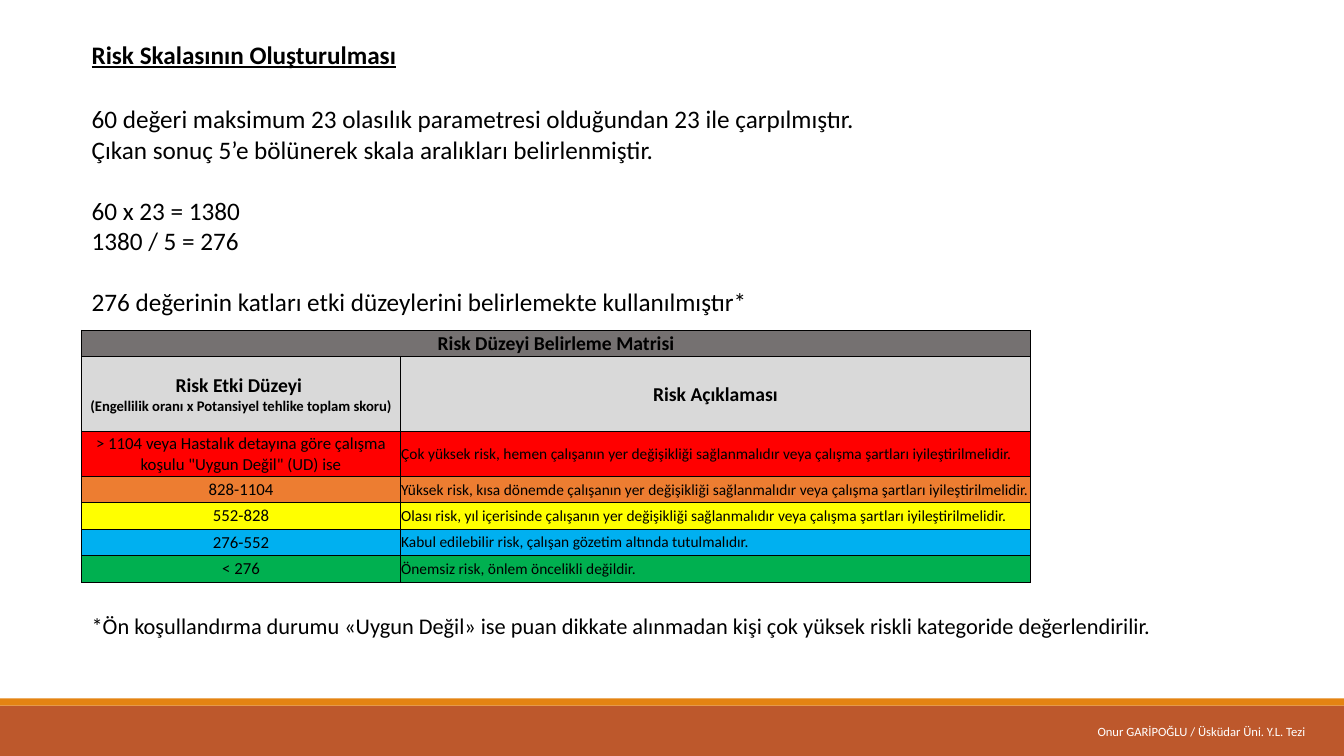
"""Build the risk scale slide with its risk level matrix."""
import lxml.etree
import pptx
import pptx.dml.color
import pptx.enum.shapes
import pptx.enum.text
import pptx.oxml.ns
import pptx.util

Cm = pptx.util.Cm
Pt = pptx.util.Pt
RGBColor = pptx.dml.color.RGBColor
PP_ALIGN = pptx.enum.text.PP_ALIGN
MIDDLE = pptx.enum.text.MSO_ANCHOR.MIDDLE

BLACK = RGBColor(0x00, 0x00, 0x00)
WHITE = RGBColor(0xFF, 0xFF, 0xFF)
RUST = RGBColor(0xBD, 0x58, 0x2C)
AMBER = RGBColor(0xE4, 0x83, 0x12)
DARK_GREY = RGBColor(0x75, 0x71, 0x71)
LIGHT_GREY = RGBColor(0xD9, 0xD9, 0xD9)
RED = RGBColor(0xFF, 0x00, 0x00)
ORANGE = RGBColor(0xED, 0x7D, 0x31)
YELLOW = RGBColor(0xFF, 0xFF, 0x00)
BLUE = RGBColor(0x00, 0xB0, 0xF0)
GREEN = RGBColor(0x00, 0xB0, 0x50)

WIDTH, HEIGHT, LEFT = 33.87, 19.05, 2.06
COLUMNS = [8.03, 15.88]
ROWS = [0.66, 1.88, 1.14, 0.66, 0.66, 0.66, 0.69]

LEVELS = [
    (RED, '> 1104 veya Hastalık detayına göre çalışma koşulu "Uygun Değil" (UD) ise',
     "Çok yüksek risk, hemen çalışanın yer değişikliği sağlanmalıdır veya çalışma şartları iyileştirilmelidir."),
    (ORANGE, "828-1104",
     "Yüksek risk, kısa dönemde çalışanın yer değişikliği sağlanmalıdır veya çalışma şartları iyileştirilmelidir."),
    (YELLOW, "552-828",
     "Olası risk, yıl içerisinde çalışanın yer değişikliği sağlanmalıdır veya çalışma şartları iyileştirilmelidir."),
    (BLUE, "276-552", "Kabul edilebilir risk, çalışan gözetim altında tutulmalıdır."),
    (GREEN, "< 276", "Önemsiz risk, önlem öncelikli değildir."),
]

EXPLANATION = [
    ("60 değeri maksimum 23 olasılık parametresi olduğundan 23 ile çarpılmıştır.", 0),
    ("Çıkan sonuç 5’e bölünerek skala aralıkları belirlenmiştir.", 0),
    ("60 x 23 = 1380", 22),
    ("1380 / 5 = 276", 0),
    ("276 değerinin katları etki düzeylerini belirlemekte kullanılmıştır*", 22),
]


class SlideBuilder:
    def __init__(self, prs, font):
        self.s = prs.slides.add_slide(prs.slide_layouts[6])
        self.font = font

    def apply(self, target, formats):
        for name, value in formats.items():
            setattr(target, name, value)

    def run(self, p, text, size, color=BLACK, **formats):
        r = p.add_run()
        r.text = text
        self.apply(r.font, {"name": self.font, "size": Pt(size), **formats})
        r.font.color.rgb = color

    def bar(self, top, height, color):
        sp = self.s.shapes.add_shape(pptx.enum.shapes.MSO_SHAPE.RECTANGLE,
                                     0, Cm(top), Cm(WIDTH), Cm(height))
        sp.shadow.inherit = False
        sp.fill.solid()
        sp.fill.fore_color.rgb = color
        sp.line.fill.background()

    def text(self, box, lines, size, align=PP_ALIGN.LEFT, color=BLACK, anchor=None, **formats):
        tf = self.s.shapes.add_textbox(*[Cm(v) for v in box]).text_frame
        self.apply(tf, {"word_wrap": True, "vertical_anchor": anchor})
        for i, (line, gap) in enumerate(lines):
            p = tf.add_paragraph() if i else tf.paragraphs[0]
            self.apply(p, {"alignment": align, "space_before": Pt(gap)})
            self.run(p, line, size, color, **formats)

    def table(self, left, top, columns, rows):
        frame = self.s.shapes.add_table(len(rows), len(columns), Cm(left), Cm(top),
                                        Cm(sum(columns)), Cm(sum(rows)))
        table = frame.table
        self.apply(table, {"first_row": False, "horz_banding": False})
        for column, width in zip(table.columns, columns):
            column.width = Cm(width)
        for row, height in zip(table.rows, rows):
            row.height = Cm(height)
        return table

    def cell(self, table, row, col, color, parts, align=PP_ALIGN.CENTER, **formats):
        cell = table.cell(row, col)
        self.apply(cell, {"margin_left": Cm(0.02), "margin_right": Cm(0.02),
                          "margin_top": Cm(0.02), "margin_bottom": 0,
                          "vertical_anchor": MIDDLE})
        cell.fill.solid()
        cell.fill.fore_color.rgb = color
        p = cell.text_frame.paragraphs[0]
        p.alignment = align
        for i, (text, size) in enumerate(parts):
            if i:
                p.add_line_break()
            self.run(p, text, size, **formats)
        last_row, last_col = len(table.rows) - 1, len(table.columns) - 1
        outer = {"L": col == 0, "R": col == last_col, "T": row == 0, "B": row == last_row}
        self.borders(cell, outer)

    def borders(self, cell, outer):
        qn = pptx.oxml.ns.qn
        tc_pr = cell._tc.get_or_add_tcPr()
        for i, (side, is_outer) in enumerate(outer.items()):
            ln = lxml.etree.Element(qn("a:ln" + side), w=str(Pt(1 if is_outer else 0.5)))
            fill = lxml.etree.SubElement(ln, qn("a:solidFill"))
            lxml.etree.SubElement(fill, qn("a:srgbClr"), val=str(BLACK))
            tc_pr.insert(i, ln)


def main():
    prs = pptx.Presentation()
    prs.slide_width, prs.slide_height = Cm(WIDTH), Cm(HEIGHT)
    b = SlideBuilder(prs, "Calibri")

    b.bar(17.78, 1.27, RUST)
    b.bar(17.6, 0.18, AMBER)
    b.text((26.95, 18.06, 6.65, 0.76), [("Onur GARİPOĞLU / Üsküdar Üni. Y.L. Tezi", 0)], 9,
           PP_ALIGN.CENTER, WHITE, MIDDLE)

    matrix = b.table(LEFT, 8.33, COLUMNS, ROWS)
    b.cell(matrix, 0, 0, DARK_GREY, [("Risk Düzeyi Belirleme Matrisi", 14)], bold=True)
    b.cell(matrix, 0, 1, DARK_GREY, [])
    matrix.cell(0, 0).merge(matrix.cell(0, 1))
    b.cell(matrix, 1, 0, LIGHT_GREY,
           [("Risk Etki Düzeyi ", 14),
            ("(Engellilik oranı x Potansiyel tehlike toplam skoru)", 10.5)], bold=True)
    b.cell(matrix, 1, 1, LIGHT_GREY, [("Risk Açıklaması", 14)], bold=True)
    for row, (color, score, meaning) in enumerate(LEVELS, 2):
        b.cell(matrix, row, 0, color, [(score, 12)])
        b.cell(matrix, row, 1, color, [(meaning, 11)], PP_ALIGN.LEFT)

    b.text((LEFT, 2.49, 23.9, 5.64), EXPLANATION, 18, PP_ALIGN.JUSTIFY)
    b.text((LEFT, 15.29, 28.07, 0.94),
           [("*Ön koşullandırma durumu «Uygun Değil» ise puan dikkate alınmadan "
             "kişi çok yüksek riskli kategoride değerlendirilir.", 0)], 16)
    b.text((LEFT, 0.86, 18.82, 1.02), [("Risk Skalasının Oluşturulması", 0)], 18,
           bold=True, underline=True)
    prs.save("out.pptx")


if __name__ == "__main__":
    main()
